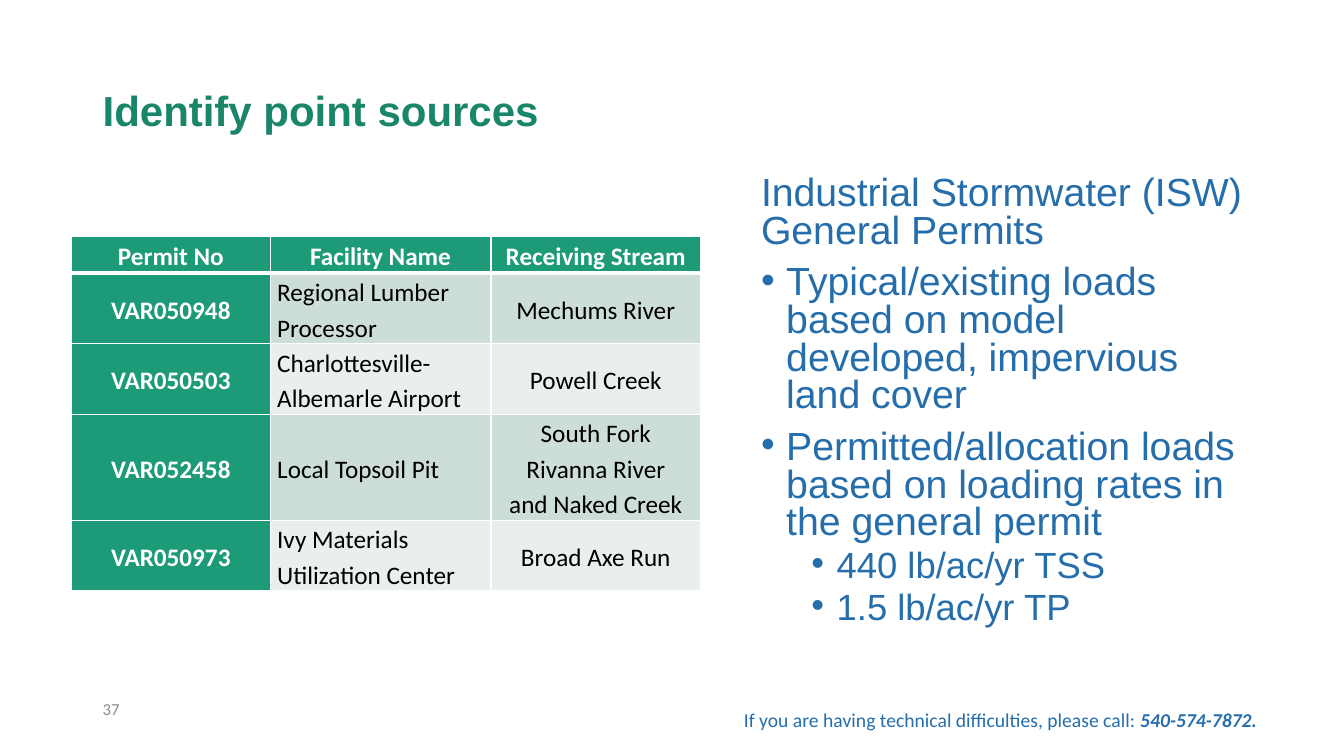
from dataclasses import dataclass

import lxml.etree
import pptx
import pptx.dml.color
import pptx.enum.text
import pptx.oxml.ns
import pptx.util

Inches = pptx.util.Inches
Pt = pptx.util.Pt
Color = pptx.dml.color.RGBColor
Align = pptx.enum.text.PP_ALIGN
Anchor = pptx.enum.text.MSO_ANCHOR
qn = pptx.oxml.ns.qn


@dataclass(frozen=True)
class Theme:
    heading_font: str = "Arial"
    small_font: str = "Calibri"
    title_color: str = "198569"
    body_color: str = "256EAB"
    number_color: str = "8C8C8C"
    header_fill: str = "1D9A78"
    band_fills: tuple[str, str] = ("CDDED6", "E8EFEC")
    white: str = "FFFFFF"
    black: str = "000000"
    title_size: int = 30
    body_size: int = 28
    detail_size: int = 26
    table_size: int = 18
    footer_size: int = 14
    number_size: int = 12


@dataclass(frozen=True)
class Point:
    text: str
    size: int
    space_before: int
    indent: float = 0
    bulleted: bool = True


@dataclass(frozen=True)
class Permit:
    number: str
    facility: str
    stream: str
    height: float


THEME = Theme()
POINTS = [
    Point("Industrial Stormwater (ISW) General Permits", THEME.body_size, 0, bulleted=False),
    Point("Typical/existing loads based on model developed, impervious land cover",
          THEME.body_size, 10, 0.25),
    Point("Permitted/allocation loads based on loading rates in the general permit",
          THEME.body_size, 10, 0.25),
    Point("440 lb/ac/yr TSS", THEME.detail_size, 5, 0.75),
    Point("1.5 lb/ac/yr TP", THEME.detail_size, 5, 0.75),
]
PERMITS = [
    Permit("Permit No", "Facility Name", "Receiving Stream", 0.36),
    Permit("VAR050948", "Regional Lumber Processor", "Mechums River", 0.7),
    Permit("VAR050503", "Charlottesville-Albemarle Airport", "Powell Creek", 0.7),
    Permit("VAR052458", "Local Topsoil Pit", "South Fork Rivanna River\nand Naked Creek", 1.05),
    Permit("VAR050973", "Ivy Materials Utilization Center", "Broad Axe Run", 0.7),
]
COLUMN_WIDTHS = [1.97, 2.19, 2.08]


def style(font, name: str, size: int, color: str, bold: bool = False) -> None:
    font.name = name
    font.size = Pt(size)
    font.bold = bold
    font.color.rgb = Color.from_string(color)


def add_text_frame(slide, left: float, top: float, width: float, height: float,
                   anchor=Anchor.TOP):
    text_frame = slide.shapes.add_textbox(
        Inches(left), Inches(top), Inches(width), Inches(height)).text_frame
    text_frame.word_wrap = True
    text_frame.vertical_anchor = anchor
    return text_frame


def add_line(slide, text: str, box: tuple[float, float, float, float],
             name: str, size: int, color: str, bold: bool = False, anchor=Anchor.TOP):
    paragraph = add_text_frame(slide, *box, anchor).paragraphs[0]
    paragraph.add_run().text = text
    style(paragraph.font, name, size, color, bold)
    return paragraph


def add_points(slide, points: list[Point]) -> None:
    text_frame = add_text_frame(slide, 7.45, 1.7, 4.97, 4.63)
    for index, point in enumerate(points):
        paragraph = text_frame.paragraphs[0] if index == 0 else text_frame.add_paragraph()
        paragraph.text = point.text
        paragraph.line_spacing = 0.8
        paragraph.space_before = Pt(point.space_before)
        if point.bulleted:
            properties = paragraph._p.get_or_add_pPr()
            properties.set("marL", str(Inches(point.indent)))
            properties.set("indent", str(Inches(-0.25)))
            lxml.etree.SubElement(properties, qn("a:buFont"), typeface=THEME.heading_font)
            lxml.etree.SubElement(properties, qn("a:buChar"), char="•")
        style(paragraph.font, THEME.heading_font, point.size, THEME.body_color)


def set_borders(cell, widths: dict[str, int]) -> None:
    properties = cell._tc.get_or_add_tcPr()
    for side, width in widths.items():
        line = lxml.etree.SubElement(properties, qn(f"a:ln{side}"), w=str(Pt(width)))
        fill = lxml.etree.SubElement(line, qn("a:solidFill"))
        lxml.etree.SubElement(fill, qn("a:srgbClr"), val=THEME.white)


def fill_cell(cell, text: str, row: int, column: int) -> None:
    heading = row == 0 or column == 0
    set_borders(cell, {"L": 1, "R": 1, "T": 3 if row == 1 else 1, "B": 3 if row == 0 else 1})
    cell.fill.solid()
    cell.fill.fore_color.rgb = Color.from_string(
        THEME.header_fill if heading else THEME.band_fills[(row - 1) % 2])
    cell.margin_left = cell.margin_right = Inches(0.07)
    cell.margin_top = cell.margin_bottom = 0
    cell.vertical_anchor = Anchor.MIDDLE
    cell.text = text
    for paragraph in cell.text_frame.paragraphs:
        paragraph.alignment = Align.LEFT if column == 1 and not heading else Align.CENTER
        paragraph.line_spacing = 1.15
        style(paragraph.font, THEME.small_font, THEME.table_size,
              THEME.white if heading else THEME.black, heading)


def add_permit_table(slide, permits: list[Permit]) -> None:
    table = slide.shapes.add_table(
        len(permits), len(COLUMN_WIDTHS), Inches(0.71), Inches(2.35),
        Inches(sum(COLUMN_WIDTHS)), Inches(sum(permit.height for permit in permits))).table
    for column, width in zip(table.columns, COLUMN_WIDTHS):
        column.width = Inches(width)
    for row, permit in enumerate(permits):
        table.rows[row].height = Inches(permit.height)
        for column, text in enumerate((permit.number, permit.facility, permit.stream)):
            fill_cell(table.cell(row, column), text, row, column)


def main() -> None:
    presentation = pptx.Presentation()
    presentation.slide_width = Inches(13.33)
    presentation.slide_height = Inches(7.5)
    slide = presentation.slides.add_slide(presentation.slide_layouts[6])

    # Title and bullet points
    title = add_line(slide, "Identify point sources", (0.92, 0.4, 11.5, 1.45),
                     THEME.heading_font, THEME.title_size, THEME.title_color, True, Anchor.MIDDLE)
    title.line_spacing = 0.9
    add_points(slide, POINTS)

    # Slide number
    add_line(slide, "37", (0.92, 6.88, 11.5, 0.45),
             THEME.small_font, THEME.number_size, THEME.number_color)

    # Permit table
    add_permit_table(slide, PERMITS)

    # Help line
    help_line = add_line(slide, "If you are having technical difficulties, please call: ",
                         (7.28, 6.97, 5.3, 0.34),
                         THEME.small_font, THEME.footer_size, THEME.body_color)
    phone = help_line.add_run()
    phone.text = "540-574-7872."
    phone.font.bold = phone.font.italic = True

    presentation.save("out.pptx")


if __name__ == "__main__":
    main()
